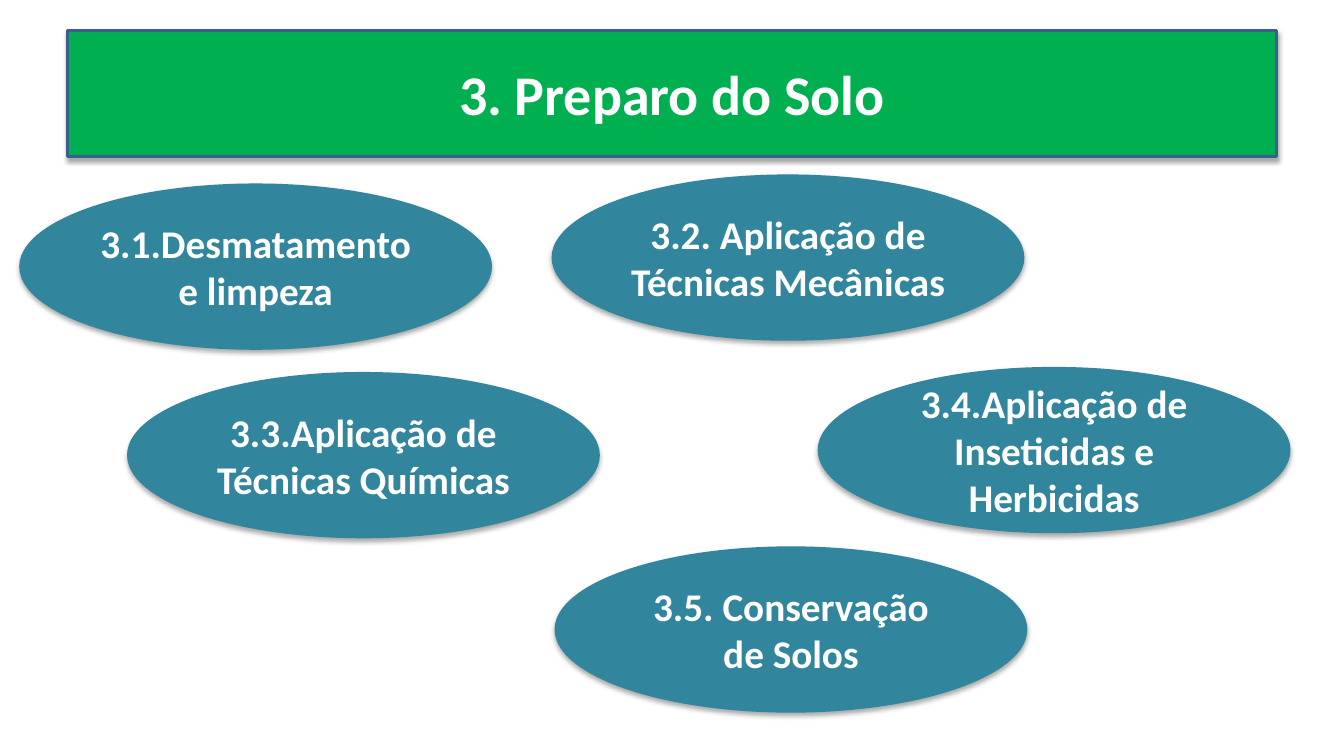
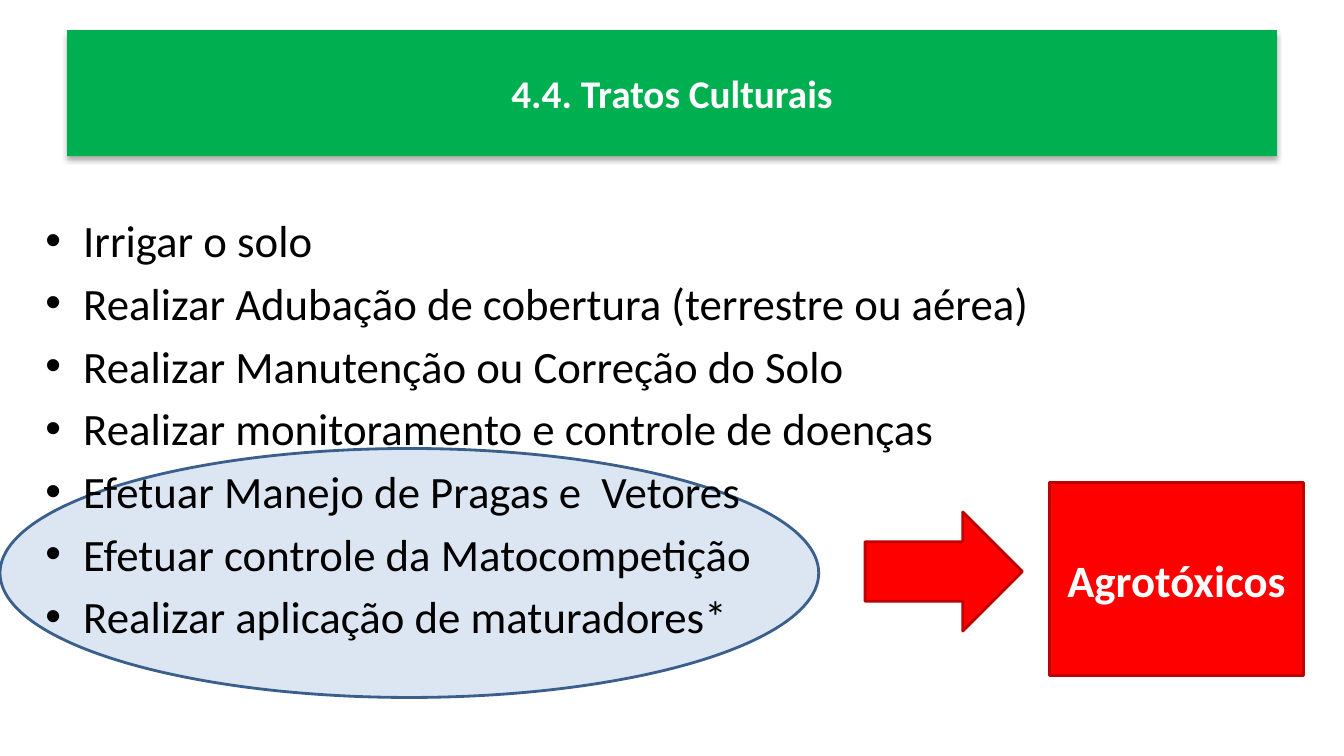
from dataclasses import dataclass

from lxml import etree
from pptx import Presentation
from pptx.dml.color import RGBColor
from pptx.enum.shapes import MSO_SHAPE as Preset
from pptx.enum.text import MSO_ANCHOR as Anchor, MSO_AUTO_SIZE as AutoSize, PP_ALIGN as Align
from pptx.oxml.ns import qn
from pptx.util import Inches, Pt


@dataclass(frozen=True)
class Theme:
    font: str = "Calibri"
    green: str = "00B050"
    teal: str = "31859C"
    pale_blue: str = "DCE6F2"
    outline: str = "3A5F8C"
    red: str = "FF0000"
    dark_red: str = "C00000"
    white: str = "FFFFFF"
    black: str = "000000"
    title_size: int = 40
    label_size: int = 28
    body_size: int = 32
    line_width: int = 2


@dataclass(frozen=True)
class Box:
    left: float
    top: float
    width: float
    height: float

    def inner(self, left, top, width, height):
        """Inner box, given in percent of this one."""
        return Box(self.left + self.width * left / 100, self.top + self.height * top / 100,
                   self.width * width / 100, self.height * height / 100)

    def place(self, shape):
        for side in ("left", "top", "width", "height"):
            setattr(shape, side, Inches(getattr(self, side)))


THEME = Theme()
PAGE = Box(0, 0, 13.33, 7.5)
TITLE_BAND = PAGE.inner(5, 4, 90, 16.67)
BODY_AREA = PAGE.inner(2.63, 27.47, 89.8, 66.93)
CALLOUT_AREA = PAGE.inner(0, 59.33, 97, 32.93)

TOPIC_WIDTH, TOPIC_HEIGHT = 35.18, 22
TOPICS = [
    ("3.1.Desmatamento e limpeza", 1.43, 24.27),
    ("3.2. Aplicação de Técnicas Mecânicas", 41.04, 23.07),
    ("3.3.Aplicação de Técnicas Químicas", 9.45, 49.2),
    ("3.4.Aplicação de Inseticidas e Herbicidas", 60.84, 48.53),
    ("3.5. Conservação de Solos", 41.26, 72.27),
]
TASKS = [
    "Irrigar o solo",
    "Realizar Adubação de cobertura (terrestre ou aérea)",
    "Realizar Manutenção ou Correção do Solo",
    "Realizar monitoramento e controle de doenças",
    "Efetuar Manejo de Pragas e  Vetores",
    "Efetuar controle da Matocompetição",
    "Realizar aplicação de maturadores*",
]


# Shared formatting
def add_shadow(shape):
    properties = shape.element.spPr
    for effects in properties.findall(qn("a:effectLst")):
        properties.remove(effects)
    effects = etree.SubElement(properties, qn("a:effectLst"))
    shadow = etree.SubElement(effects, qn("a:outerShdw"), blurRad=str(Pt(3.5)),
                              dist=str(Pt(2.2)), dir="5400000", rotWithShape="0")
    color = etree.SubElement(shadow, qn("a:srgbClr"), val=THEME.black)
    etree.SubElement(color, qn("a:alpha"), val="32000")


def paint(shape, fill, line=None, shadow=False):
    shape.fill.solid()
    shape.fill.fore_color.rgb = RGBColor.from_string(fill)
    if line:
        shape.line.color.rgb = RGBColor.from_string(line)
        shape.line.width = Pt(THEME.line_width)
    else:
        shape.line.fill.background()
    if shadow:
        add_shadow(shape)


def write(shape, lines, size, color=THEME.white, bold=True, align=Align.CENTER,
          anchor=Anchor.MIDDLE):
    frame = shape.text_frame
    frame.text = "\n".join(lines)
    frame_format = {"word_wrap": True, "auto_size": AutoSize.NONE, "vertical_anchor": anchor}
    for name, value in frame_format.items():
        setattr(frame, name, value)
    font_format = {"name": THEME.font, "size": Pt(size), "bold": bold}
    for paragraph in frame.paragraphs:
        paragraph.alignment = align
        for run in paragraph.runs:
            for name, value in font_format.items():
                setattr(run.font, name, value)
            run.font.color.rgb = RGBColor.from_string(color)


def add_figure(slide, preset, box, fill, line=None, shadow=False):
    shape = slide.shapes.add_shape(preset, 0, 0, 0, 0)
    box.place(shape)
    shape.shadow.inherit = False
    paint(shape, fill, line, shadow)
    return shape


# Regions
def title_band(slide, box, text, size, line=None):
    title = slide.shapes.title
    box.place(title)
    paint(title, THEME.green, line, shadow=True)
    write(title, [text], size)


def topic_map(slide, box):
    for text, left, top in TOPICS:
        topic_box = box.inner(left, top, TOPIC_WIDTH, TOPIC_HEIGHT)
        topic = add_figure(slide, Preset.OVAL, topic_box, THEME.teal, shadow=True)
        write(topic, [text], THEME.label_size)


def callout(slide, box, text):
    add_figure(slide, Preset.OVAL, box.inner(0, 0, 62.8, 100), THEME.pale_blue, THEME.outline)
    red = {"fill": THEME.red, "line": THEME.dark_red}
    add_figure(slide, Preset.RIGHT_ARROW, box.inner(66.36, 25.5, 12.06, 47.8), **red)
    label = add_figure(slide, Preset.RECTANGLE, box.inner(80.5, 13.8, 19.5, 77.3), **red)
    write(label, [text], THEME.body_size)


def task_list(slide, box):
    body = slide.placeholders[1]
    box.place(body)
    write(body, TASKS, THEME.body_size, THEME.black, bold=False, align=Align.LEFT,
          anchor=Anchor.TOP)
    # The list lies in front of the highlight
    body.element.getparent().append(body.element)


# Slides
def soil_slide(presentation):
    slide = presentation.slides.add_slide(presentation.slide_layouts.get_by_name("Title Only"))
    title_band(slide, TITLE_BAND, "3. Preparo do Solo", THEME.title_size, THEME.outline)
    topic_map(slide, PAGE)


def crop_care_slide(presentation):
    layout = presentation.slide_layouts.get_by_name("Title and Content")
    slide = presentation.slides.add_slide(layout)
    title_band(slide, TITLE_BAND, "4.4. Tratos Culturais", THEME.label_size)
    callout(slide, CALLOUT_AREA, "Agrotóxicos")
    task_list(slide, BODY_AREA)


def main():
    presentation = Presentation()
    presentation.slide_width = Inches(PAGE.width)
    presentation.slide_height = Inches(PAGE.height)
    soil_slide(presentation)
    crop_care_slide(presentation)
    presentation.save("out.pptx")


if __name__ == "__main__":
    main()
